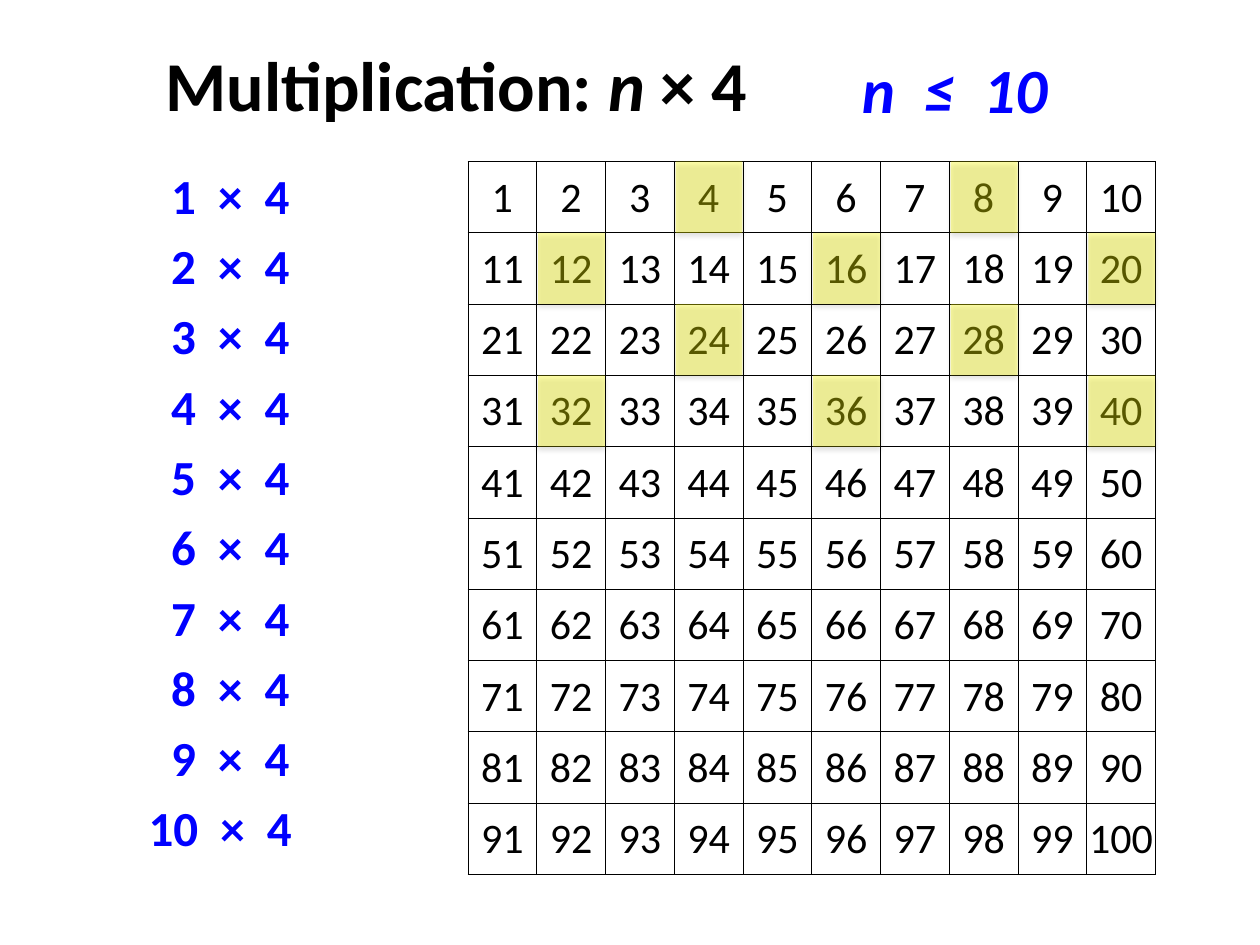
from dataclasses import dataclass

from lxml.etree import SubElement
from pptx import Presentation
from pptx.dml.color import RGBColor
from pptx.enum.shapes import MSO_SHAPE
from pptx.enum.text import MSO_ANCHOR, MSO_AUTO_SIZE, PP_ALIGN
from pptx.oxml.ns import qn
from pptx.util import Pt

BLACK = RGBColor(0, 0, 0)
BLUE = RGBColor(0, 0, 255)
YELLOW = RGBColor(255, 255, 0)

FACTOR = 4
GRID_SIZE = 10
GRID_LEFT, GRID_TOP = 267.4, 92.3
COLUMN_WIDTH, ROW_HEIGHT = 39.3, 40.75
FACT_TOP, FACT_STEP = 84.3, 40.15

TITLE_FONT = {"name": "Calibri", "size": Pt(40), "bold": True, "italic": False}
LIMIT_FONT = {"name": "Calibri", "size": Pt(36), "bold": True, "italic": True}
FACT_FONT = {"name": "Calibri", "size": Pt(28), "bold": True}
NUMBER_FONT = {"name": "Calibri", "size": Pt(24), "bold": False}
FACT_PARAGRAPH = {"alignment": PP_ALIGN.LEFT, "line_spacing": 1.2,
                  "space_before": Pt(0), "space_after": Pt(6)}
FRAME_FORMAT = {"word_wrap": True, "auto_size": MSO_AUTO_SIZE.NONE}
CELL_FORMAT = {"margin_left": Pt(0.72), "margin_right": Pt(0.72),
               "margin_top": Pt(0.72), "margin_bottom": Pt(0),
               "vertical_anchor": MSO_ANCHOR.MIDDLE}
PLAIN_TABLE = {"first_row": False, "horz_banding": False}


@dataclass
class Box:
    left: float
    top: float
    width: float
    height: float

    def lengths(self) -> tuple:
        return Pt(self.left), Pt(self.top), Pt(self.width), Pt(self.height)


@dataclass
class Fact:
    multiplier: int
    box: Box

    @property
    def text(self) -> str:
        return f"{self.multiplier}  ×  {FACTOR}"


def apply_format(target, values: dict) -> None:
    for attribute, value in values.items():
        setattr(target, attribute, value)


def add_run(paragraph, text: str, font: dict, color: RGBColor) -> None:
    run = paragraph.add_run()
    run.text = text
    apply_format(run.font, font)
    run.font.color.rgb = color


def place(placeholder, box: Box) -> None:
    lengths = dict(zip(("left", "top", "width", "height"), box.lengths()))
    apply_format(placeholder, lengths)


def write_line(frame, text: str, font: dict) -> None:
    apply_format(frame, FRAME_FORMAT)
    paragraph = frame.paragraphs[0]
    apply_format(paragraph, FACT_PARAGRAPH)
    add_run(paragraph, text, font, BLUE)


def add_fact(slide, fact: Fact) -> None:
    fact_box = slide.shapes.add_textbox(*fact.box.lengths())
    write_line(fact_box.text_frame, fact.text, FACT_FONT)


def add_borders(cell) -> None:
    properties = cell._tc.get_or_add_tcPr()
    for side in ("a:lnL", "a:lnR", "a:lnT", "a:lnB"):
        border = SubElement(properties, qn(side), w=str(Pt(0.5)))
        fill = SubElement(border, qn("a:solidFill"))
        SubElement(fill, qn("a:srgbClr"), val=str(BLACK))


def add_number_grid(slide) -> None:
    frame = Box(GRID_LEFT, GRID_TOP, GRID_SIZE * COLUMN_WIDTH, GRID_SIZE * ROW_HEIGHT)
    table = slide.shapes.add_table(GRID_SIZE, GRID_SIZE, *frame.lengths()).table
    apply_format(table, PLAIN_TABLE)
    for column in table.columns:
        column.width = Pt(COLUMN_WIDTH)
    for row in table.rows:
        row.height = Pt(ROW_HEIGHT)
    for number, cell in enumerate(table.iter_cells(), start=1):
        apply_format(cell, CELL_FORMAT)
        add_borders(cell)
        cell.fill.background()
        paragraph = cell.text_frame.paragraphs[0]
        paragraph.alignment = PP_ALIGN.CENTER
        add_run(paragraph, str(number), NUMBER_FONT, BLACK)


def add_highlight(slide, number: int) -> None:
    row, column = divmod(number - 1, GRID_SIZE)
    box = Box(GRID_LEFT + column * COLUMN_WIDTH + 0.8,
              GRID_TOP + row * ROW_HEIGHT, 38.2, ROW_HEIGHT)
    highlight = slide.shapes.add_shape(MSO_SHAPE.RECTANGLE, *box.lengths())
    highlight.line.fill.background()
    highlight.fill.solid()
    highlight.fill.fore_color.rgb = YELLOW
    highlight.shadow.inherit = False
    # Transparent fill and soft shadow below
    properties = highlight._element.spPr
    fill_color = properties.find(qn("a:solidFill")).find(qn("a:srgbClr"))
    SubElement(fill_color, qn("a:alpha"), val="34000")
    shadow = SubElement(properties.find(qn("a:effectLst")), qn("a:outerShdw"),
                        blurRad=str(Pt(3.1)), dist=str(Pt(1.8)),
                        dir="5400000", rotWithShape="0")
    shadow_color = SubElement(shadow, qn("a:srgbClr"), val=str(BLACK))
    SubElement(shadow_color, qn("a:alpha"), val="35000")


def main() -> None:
    presentation = Presentation()
    presentation.slide_width, presentation.slide_height = Pt(720), Pt(540)
    slide = presentation.slides.add_slide(presentation.slide_layouts[0])

    # Title and limit of n
    title, limit = slide.placeholders
    place(title, Box(56.9, 18, 407.5, 59))
    apply_format(title.text_frame, FRAME_FORMAT)
    title.text_frame.vertical_anchor = MSO_ANCHOR.MIDDLE
    heading = title.text_frame.paragraphs[0]
    heading.alignment = PP_ALIGN.CENTER
    add_run(heading, "Multiplication: ", TITLE_FONT, BLACK)
    add_run(heading, "n", TITLE_FONT | {"italic": True}, BLACK)
    add_run(heading, f" × {FACTOR}", TITLE_FONT, BLACK)
    place(limit, Box(485.3, 16.6, 154, 64.8))
    write_line(limit.text_frame, f"n  ≤  {GRID_SIZE}", LIMIT_FONT)

    # Hundred grid with the multiples marked
    add_number_grid(slide)
    for multiplier in range(1, GRID_SIZE + 1):
        add_highlight(slide, multiplier * FACTOR)

    # Multiplication facts, the two-digit one set further left
    for multiplier in range(1, GRID_SIZE + 1):
        left, width = (90.7, 154) if multiplier < 10 else (77.8, 101.5)
        top = FACT_TOP + (multiplier - 1) * FACT_STEP
        add_fact(slide, Fact(multiplier, Box(left, top, width, 64.8)))

    presentation.save("out.pptx")


if __name__ == "__main__":
    main()
